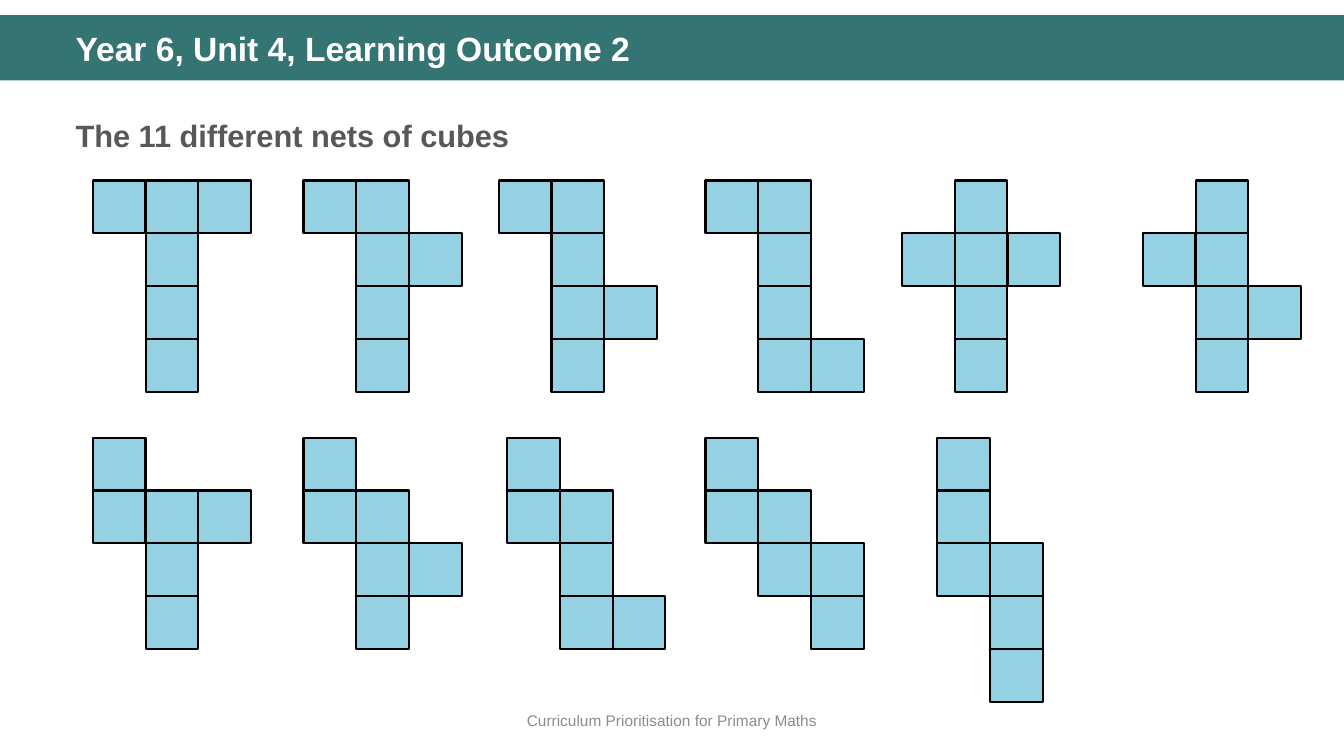
from lxml.etree import SubElement
from pptx import Presentation
from pptx.dml.color import RGBColor
from pptx.enum.shapes import MSO_SHAPE
from pptx.enum.text import MSO_ANCHOR, MSO_AUTO_SIZE, PP_ALIGN
from pptx.oxml.ns import qn
from pptx.util import Cm, Pt

WIDE, HIGH = 33.87, 19.05
SIDE = 1.33

# Each row of nets: top, then the left edge and cell pattern of each net.
ROWS = [
    (4.55, [
        (2.34, ["###", ".#.", ".#.", ".#."]),
        (7.65, ["##.", ".##", ".#.", ".#."]),
        (12.57, ["##.", ".#.", ".##", ".#."]),
        (17.78, ["##.", ".#.", ".#.", ".##"]),
        (22.73, [".#.", "###", ".#.", ".#."]),
        (28.8, [".#.", "##.", ".##", ".#."]),
    ]),
    (11.03, [
        (2.34, ["#..", "###", ".#.", ".#."]),
        (7.65, ["#..", "##.", ".##", ".#."]),
        (12.78, ["#..", "##.", ".#.", ".##"]),
        (17.78, ["#..", "##.", ".##", "..#"]),
        (23.62, ["#.", "#.", "##", ".#", ".#"]),
    ]),
]


def color(code):
    return RGBColor.from_string(code)


def apply(item, values):
    for name, value in values.items():
        setattr(item, name, value)


class Deck:
    font = "Arial"
    teal, blue, black = "347574", "95D1E2", "000000"

    def __init__(self):
        self.show = Presentation()
        apply(self.show, {"slide_width": Cm(WIDE), "slide_height": Cm(HIGH)})
        self.slide = self.show.slides.add_slide(self.show.slide_layouts[1])
        self.title, self.body = self.slide.placeholders

    def place(self, shape, box, text, size, ink, bold=False,
              anchor=MSO_ANCHOR.MIDDLE, bare=False, **layout):
        """Place a text shape and format its only paragraph; bare drops the bullet."""
        apply(shape, dict(zip(("left", "top", "width", "height"), map(Cm, box))))
        frame = shape.text_frame
        apply(frame, {"text": text, "word_wrap": True, "vertical_anchor": anchor,
                      "auto_size": MSO_AUTO_SIZE.NONE})
        para = frame.paragraphs[0]
        apply(para, {"space_before": Pt(0), **layout})
        if bare:
            props = para._p.get_or_add_pPr()
            props.set("marL", "0")
            props.set("indent", "0")
            SubElement(props, qn("a:buNone"))
        font = para.runs[0].font
        apply(font, {"name": self.font, "size": Pt(size), "bold": bold})
        font.color.rgb = color(ink)

    def label(self, *args, **layout):
        shape = self.slide.shapes.add_textbox(0, 0, 0, 0)
        self.place(shape, *args, **layout)

    def block(self, shapes, box, fill, line=None):
        shape = shapes.add_shape(MSO_SHAPE.RECTANGLE, *map(Cm, box))
        shape.shadow.inherit = False
        shape.fill.solid()
        shape.fill.fore_color.rgb = color(fill)
        if line:
            shape.line.color.rgb = color(line)
            shape.line.width = Pt(1.5)
        else:
            shape.line.fill.background()
        return shape

    def band(self, box):
        """Draw the header band behind the title."""
        shape = self.block(self.slide.shapes, box, self.teal)
        self.title.element.addprevious(shape.element)

    def net(self, left, top, cells):
        group = self.slide.shapes.add_group_shape()
        for row, line in enumerate(cells):
            for col, mark in enumerate(line):
                if mark == "#":
                    box = left + col * SIDE, top + row * SIDE, SIDE, SIDE
                    self.block(group.shapes, box, self.blue, self.black)


def main():
    deck = Deck()
    deck.band((0, 0.38, WIDE, 1.65))
    deck.place(deck.title, (1.65, 0.69, 30.94, 1.19),
               "Year 6, Unit 4, Learning Outcome 2", 24, "FFFFFF", bold=True,
               alignment=PP_ALIGN.LEFT, line_spacing=0.9)
    deck.place(deck.body, (1.65, 2.64, 30.94, 1.27),
               "The 11 different nets of cubes", 22, "585858", bold=True,
               anchor=MSO_ANCHOR.TOP, bare=True,
               line_spacing=1.2, space_after=Pt(4.5))
    deck.label((0, 17.65, WIDE, 1.02), "Curriculum Prioritisation for Primary Maths",
               11, "8C8C8C", alignment=PP_ALIGN.CENTER)
    for top, nets in ROWS:
        for left, cells in nets:
            deck.net(left, top, cells)
    deck.show.save("out.pptx")


if __name__ == "__main__":
    main()
